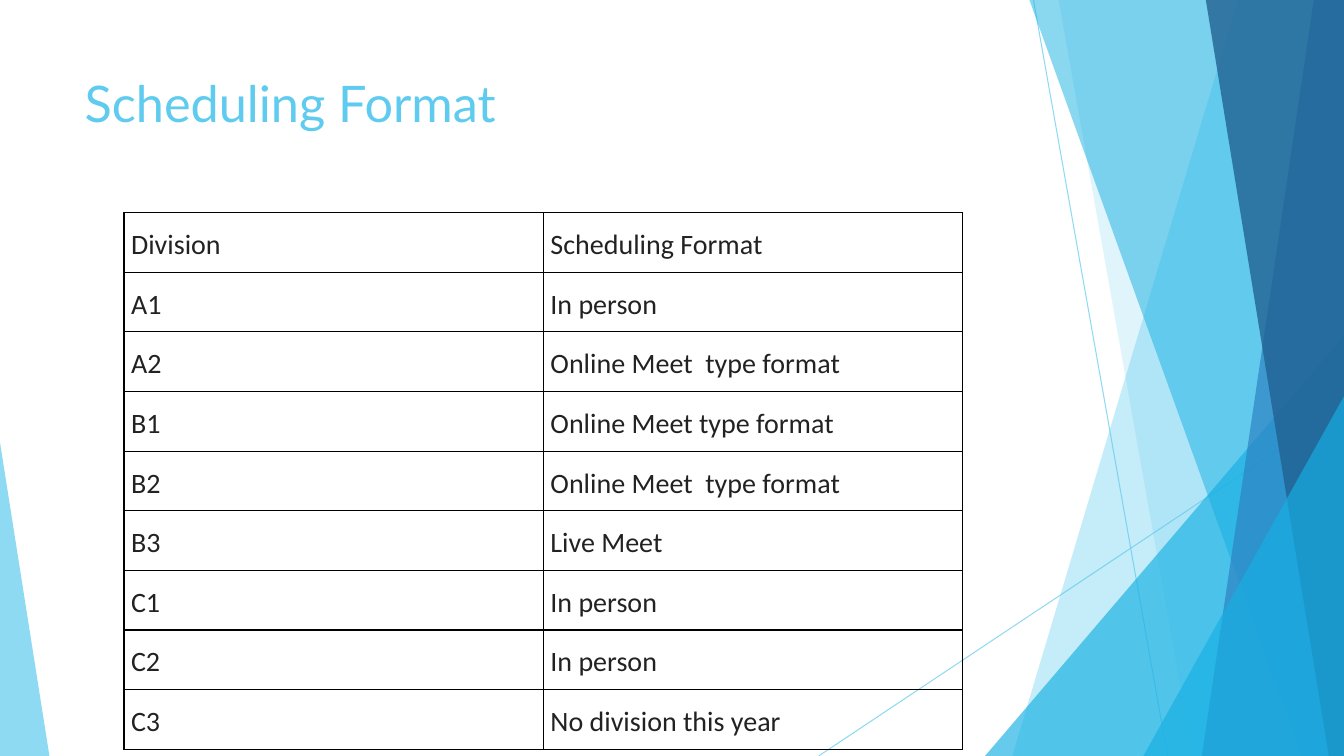
from lxml import etree
from pptx import Presentation
from pptx.dml.color import RGBColor
from pptx.enum.shapes import MSO_CONNECTOR, MSO_SHAPE
from pptx.enum.text import MSO_ANCHOR, PP_ALIGN
from pptx.oxml.ns import qn
from pptx.util import Emu, Pt

STRAIGHT = MSO_CONNECTOR.STRAIGHT
TRIANGLE = MSO_SHAPE.ISOSCELES_TRIANGLE
LEFT = PP_ALIGN.LEFT
TOP = MSO_ANCHOR.TOP

EMU_PER_PX = 9144  # 100 px to the inch
WIDTH, HEIGHT = 1333, 750
TITLE_ONLY = 5

SKY, CYAN, BLUE, NAVY = "5FCBEF", "16B0E3", "2E83C3", "226292"
INK, BLACK = "222222", "000000"

SCHEDULE = [
    ("Division", "Scheduling Format"),
    ("A1", "In person"),
    ("A2", "Online Meet  type format"),
    ("B1", "Online Meet type format"),
    ("B2", "Online Meet  type format"),
    ("B3", "Live Meet"),
    ("C1", "In person"),
    ("C2", "In person"),
    ("C3", "No division this year"),
]


def px(value):
    return Emu(value * EMU_PER_PX)


def color(hex_string):
    return RGBColor.from_string(hex_string)


def set_fill(fill, hex_string, opacity):
    """Solid colour with an opacity in percent."""
    fill.solid()
    fill.fore_color.rgb = color(hex_string)
    for color_element in fill._xPr.iter(qn("a:srgbClr")):
        alpha = etree.SubElement(color_element, qn("a:alpha"))
        alpha.set("val", str(opacity * 1000))


def set_text(frame, text, *, size, font, hex_string, spacing=None):
    paragraph = frame.paragraphs[0]
    paragraph.alignment = LEFT
    if spacing:
        paragraph.line_spacing = spacing
    run = paragraph.add_run()
    run.text = text
    run.font.size = Pt(size)
    run.font.name = font
    run.font.color.rgb = color(hex_string)


def add_line(slide, start, end):
    line = slide.shapes.add_connector(STRAIGHT, *map(px, start + end))
    line.line.width = Pt(0.75)
    set_fill(line.line.fill, SKY, 70)
    etree.SubElement(line._element.spPr, qn("a:effectLst"))


def finish_facet(shape, hex_string, opacity):
    set_fill(shape.fill, hex_string, opacity)
    shape.line.fill.background()
    shape.shadow.inherit = False


def add_band(slide, top_x, bottom_x, hex_string, opacity):
    """Full-height facet from a slanted left edge to the slide's right edge."""
    builder = slide.shapes.build_freeform(px(top_x), 0, scale=1.0)
    corners = [(WIDTH, 0), (WIDTH, HEIGHT), (bottom_x, HEIGHT)]
    builder.add_line_segments([(px(x), px(y)) for x, y in corners], close=True)
    finish_facet(builder.convert_to_shape(), hex_string, opacity)


def add_triangle(slide, left, top, width, apex, hex_string, opacity):
    """Triangle standing on the slide's bottom edge."""
    shape = slide.shapes.add_shape(
        TRIANGLE, px(left), px(top), px(width), px(HEIGHT - top))
    shape.adjustments[0] = apex
    finish_facet(shape, hex_string, opacity)


def add_decoration(slide):
    add_line(slide, (1025, 0), (1158, HEIGHT))
    add_line(slide, (WIDTH, 403), (812, HEIGHT))
    add_band(slide, 1228, 1004, SKY, 36)
    add_band(slide, 1050, 1183, SKY, 20)
    add_triangle(slide, 977, 333, 356, 1, CYAN, 66)
    add_band(slide, 1021, 1291, CYAN, 50)
    add_band(slide, 1303, 1192, BLUE, 70)
    add_band(slide, 1196, 1318, NAVY, 80)
    add_triangle(slide, 1134, 393, 199, 1, CYAN, 66)
    add_triangle(slide, 0, 439, 49, 0, SKY, 70)


def format_title(slide, text):
    title = slide.shapes.title
    title.left, title.top, title.width, title.height = map(px, (74, 67, 940, 144))
    title.text_frame.vertical_anchor = TOP
    set_text(title.text_frame, text, size=36, font="Lato", hex_string=SKY)
    # Bring the title in front of the decoration
    slide.shapes._spTree.append(title._element)


def add_borders(cell):
    properties = cell._tc.get_or_add_tcPr()
    for index, side in enumerate(("a:lnL", "a:lnR", "a:lnT", "a:lnB")):
        border = etree.Element(qn(side), w=str(Pt(1)))
        solid = etree.SubElement(border, qn("a:solidFill"))
        etree.SubElement(solid, qn("a:srgbClr"), val=BLACK)
        properties.insert(index, border)


def add_schedule(slide, rows):
    row_height = 54
    table = slide.shapes.add_table(
        len(rows), len(rows[0]), px(123), px(211), px(832),
        px(row_height * len(rows))).table
    table.first_row = False
    table.horz_banding = False
    for row_index, row in enumerate(rows):
        for column_index, text in enumerate(row):
            cell = table.cell(row_index, column_index)
            cell.fill.background()
            cell.margin_left = cell.margin_right = px(7)
            cell.margin_top = cell.margin_bottom = px(10)
            set_text(cell.text_frame, text, size=20, font="Calibri",
                     hex_string=INK, spacing=1.15)
            add_borders(cell)


def main():
    presentation = Presentation()
    presentation.slide_width, presentation.slide_height = px(WIDTH), px(HEIGHT)
    slide = presentation.slides.add_slide(presentation.slide_layouts[TITLE_ONLY])
    add_decoration(slide)
    format_title(slide, "Scheduling Format")
    add_schedule(slide, SCHEDULE)
    presentation.save("out.pptx")


if __name__ == "__main__":
    main()
